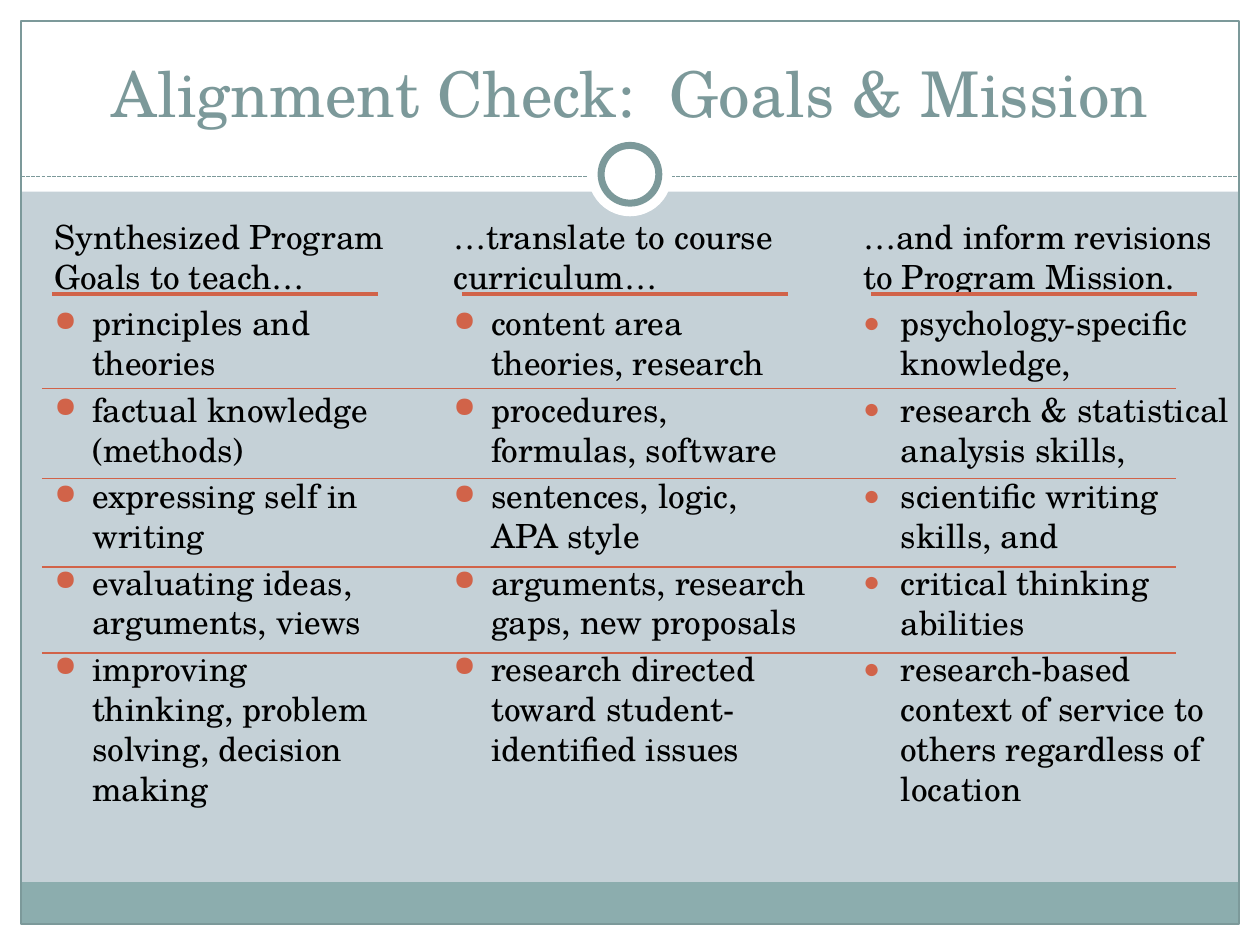
"""Build a slide aligning program goals, course curriculum and program mission."""
from dataclasses import dataclass
from typing import Optional

from lxml import etree
from pptx import Presentation
from pptx.dml.color import RGBColor
from pptx.enum.dml import MSO_LINE
from pptx.enum.shapes import MSO_CONNECTOR, MSO_SHAPE
from pptx.enum.text import MSO_ANCHOR, MSO_AUTO_SIZE, PP_ALIGN
from pptx.oxml.ns import qn
from pptx.util import Inches, Pt

RECTANGLE, OVAL = MSO_SHAPE.RECTANGLE, MSO_SHAPE.OVAL
STRAIGHT = MSO_CONNECTOR.STRAIGHT
DASHED = MSO_LINE.SQUARE_DOT
TOP, BOTTOM = MSO_ANCHOR.TOP, MSO_ANCHOR.BOTTOM
LEFT, CENTER = PP_ALIGN.LEFT, PP_ALIGN.CENTER
NO_AUTOFIT = MSO_AUTO_SIZE.NONE

COLUMNS, ROWS = 120, 90
WIDTH, HEIGHT = Inches(10), Inches(7.5)


@dataclass(frozen=True)
class Theme:
    font: str = "TeX Gyre Schola"
    background: str = "C5D1D7"
    paper: str = "FFFFFF"
    footer: str = "8CADAE"
    frame: str = "7C999A"
    accent: str = "D16349"
    text: str = "000000"
    title_size: float = 36
    body_size: float = 19
    space_before: float = 3.8
    bullet_percent: int = 85
    thin: float = 0.75
    thick: float = 2
    ring: float = 4


@dataclass(frozen=True)
class Box:
    column: float
    row: float
    columns: float
    rows: float

    def lengths(self) -> tuple:
        return across(self.column), down(self.row), across(self.columns), down(self.rows)


@dataclass(frozen=True)
class Panel:
    box: Box
    fill: Optional[str] = None
    line: Optional[str] = None
    weight: float = 0
    kind: int = RECTANGLE


@dataclass(frozen=True)
class Rule:
    start: float
    end: float
    row: float
    color: str
    weight: float
    dashed: bool = False


@dataclass(frozen=True)
class GoalColumn:
    box: Box
    heading: str
    items: tuple


THEME = Theme()

FRAME_PANELS = (
    Panel(Box(0, 88, 120, 2), THEME.paper),
    Panel(Box(0, 0, 120, 18.25), THEME.paper),
    Panel(Box(0, 0, 2, 90), THEME.paper),
    Panel(Box(118, 0, 2, 90), THEME.paper),
    Panel(Box(2, 84, 116, 4), THEME.footer),
    Panel(Box(2, 2, 116, 86), None, THEME.frame, THEME.thin),
)
RING_PANELS = (
    Panel(Box(56, 12.6, 8, 8), THEME.paper, kind=OVAL),
    Panel(Box(57.25, 13.85, 5.5, 5.5), THEME.paper, THEME.frame, THEME.ring, OVAL),
)
TITLE_RULE = Rule(2, 118, 16.8, THEME.frame, THEME.thin, True)
ROW_RULES = tuple(Rule(4, 112, row, THEME.accent, THEME.thin)
                  for row in (37, 45.6, 54, 62.2))
HEADING_RULES = tuple(Rule(start, start + 31, 28, THEME.accent, THEME.thick)
                      for start in range(5, COLUMNS, 39))

MISSION = GoalColumn(Box(81, 20, 38, 60), "…and inform revisions to Program Mission.", (
    "psychology-specific knowledge,",
    "research & statistical analysis skills,",
    "scientific writing skills, and",
    "critical thinking abilities",
    "research-based context of service to others regardless of location",
))
CURRICULUM = GoalColumn(Box(42, 20, 36, 60), "…translate to course curriculum…", (
    "content area theories, research",
    "procedures, formulas, software",
    "sentences, logic, APA style",
    "arguments, research gaps, new proposals",
    "research directed toward student-identified issues",
))
GOALS = GoalColumn(Box(4, 20, 34, 60), "Synthesized Program Goals to teach…", (
    "principles and theories",
    "factual knowledge (methods)",
    "expressing self in writing",
    "evaluating ideas, arguments, views",
    "improving thinking, problem solving, decision making",
))


def across(columns: float) -> int:
    return round(WIDTH * columns / COLUMNS)


def down(rows: float) -> int:
    return round(HEIGHT * rows / ROWS)


def place(shape, box: Box) -> None:
    shape.left, shape.top, shape.width, shape.height = box.lengths()


def draw_panel(slide, panel: Panel) -> None:
    shape = slide.shapes.add_shape(panel.kind, *panel.box.lengths())
    shape.shadow.inherit = False
    if panel.fill:
        shape.fill.solid()
        shape.fill.fore_color.rgb = RGBColor.from_string(panel.fill)
    else:
        shape.fill.background()
    if panel.line:
        shape.line.color.rgb = RGBColor.from_string(panel.line)
        shape.line.width = Pt(panel.weight)
    else:
        shape.line.fill.background()


def draw_rule(slide, rule: Rule) -> None:
    connector = slide.shapes.add_connector(
        STRAIGHT, across(rule.start), down(rule.row), across(rule.end), down(rule.row))
    connector.line.color.rgb = RGBColor.from_string(rule.color)
    connector.line.width = Pt(rule.weight)
    if rule.dashed:
        connector.line.dash_style = DASHED
    etree.SubElement(connector.element.spPr, qn("a:effectLst"))


def format_paragraph(paragraph, size: float, color: str, alignment) -> None:
    paragraph.alignment = alignment
    paragraph.font.name = THEME.font
    paragraph.font.size = Pt(size)
    paragraph.font.color.rgb = RGBColor.from_string(color)


def set_bullet(paragraph, bulleted: bool) -> None:
    properties = paragraph._p.get_or_add_pPr()
    indent = Inches(0.3) if bulleted else 0
    properties.set("marL", str(indent))
    properties.set("indent", str(-indent))
    if not bulleted:
        etree.SubElement(properties, qn("a:buNone"))
        return
    color = etree.SubElement(properties, qn("a:buClr"))
    etree.SubElement(color, qn("a:srgbClr"), val=THEME.accent)
    etree.SubElement(properties, qn("a:buSzPct"), val=str(THEME.bullet_percent * 1000))
    etree.SubElement(properties, qn("a:buChar"), char="●")


def prepare_frame(shape, anchor):
    frame = shape.text_frame
    frame.word_wrap = True
    frame.auto_size = NO_AUTOFIT
    frame.vertical_anchor = anchor
    return frame


def fill_column(shape, column: GoalColumn) -> None:
    place(shape, column.box)
    frame = prepare_frame(shape, TOP)
    frame.text = "\n".join((column.heading, *column.items))
    for index, paragraph in enumerate(frame.paragraphs):
        paragraph.space_before = Pt(THEME.space_before)
        set_bullet(paragraph, index > 0)
        format_paragraph(paragraph, THEME.body_size, THEME.text, LEFT)


def fill_title(shape) -> None:
    place(shape, Box(4, 3, 112, 10))
    frame = prepare_frame(shape, BOTTOM)
    frame.text = "Alignment Check:  Goals & Mission"
    format_paragraph(frame.paragraphs[0], THEME.title_size, THEME.frame, CENTER)


def main() -> None:
    presentation = Presentation()
    presentation.slide_width, presentation.slide_height = WIDTH, HEIGHT
    slide = presentation.slides.add_slide(presentation.slide_layouts[1])
    slide.background.fill.solid()
    slide.background.fill.fore_color.rgb = RGBColor.from_string(THEME.background)
    title, body = slide.placeholders
    for panel in FRAME_PANELS:
        draw_panel(slide, panel)
    draw_rule(slide, TITLE_RULE)
    for panel in RING_PANELS:
        draw_panel(slide, panel)
    for placeholder in (title, body):
        slide.shapes.element.append(placeholder.element)
    fill_title(title)
    fill_column(body, MISSION)
    for column in (CURRICULUM, GOALS):
        fill_column(slide.shapes.add_textbox(*column.box.lengths()), column)
    for rule in ROW_RULES + HEADING_RULES:
        draw_rule(slide, rule)
    presentation.save("out.pptx")


if __name__ == "__main__":
    main()
